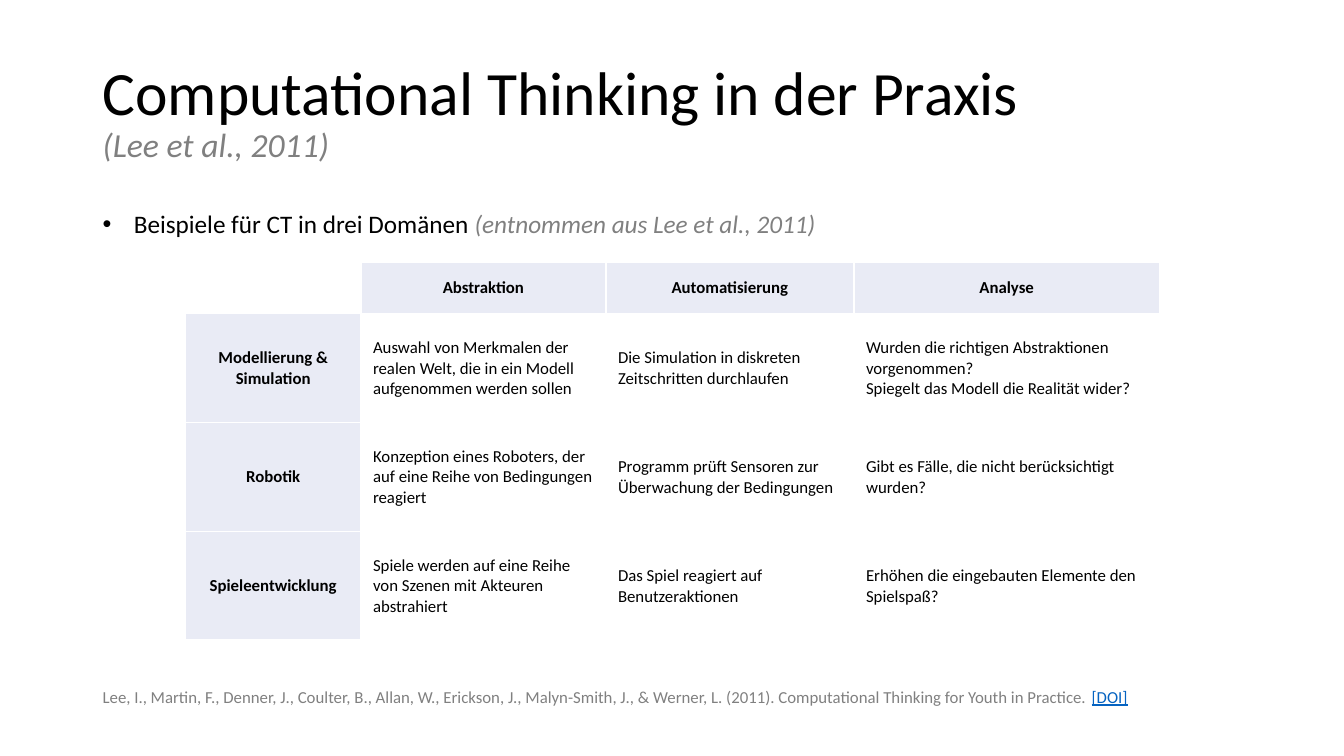
from lxml.etree import SubElement
from pptx import Presentation
from pptx.dml.color import RGBColor
from pptx.enum.text import MSO_ANCHOR, PP_ALIGN
from pptx.oxml.ns import qn
from pptx.util import Inches, Pt

WIDE, HIGH = 13.33, 7.5
LEFT, SPAN = 0.92, 11.5
FONT = "Calibri"
BLACK = RGBColor(0x00, 0x00, 0x00)
GREY = RGBColor(0x80, 0x80, 0x80)
BLUE = RGBColor(0x05, 0x63, 0xC1)
PALE = RGBColor(0xE9, 0xEB, 0xF5)

COLS = [1.74, 2.43, 2.46, 3.03]
ROWS = [0.51] + [1.08] * 3
CELLS = [
    ["", "Abstraktion", "Automatisierung", "Analyse"],
    ["Modellierung & Simulation",
     "Auswahl von Merkmalen der realen Welt, die in ein Modell aufgenommen werden sollen",
     "Die Simulation in diskreten Zeitschritten durchlaufen",
     "Wurden die richtigen Abstraktionen vorgenommen?\v"
     "Spiegelt das Modell die Realität wider?"],
    ["Robotik",
     "Konzeption eines Roboters, der auf eine Reihe von Bedingungen reagiert",
     "Programm prüft Sensoren zur Überwachung der Bedingungen",
     "Gibt es Fälle, die nicht berücksichtigt wurden?"],
    ["Spieleentwicklung",
     "Spiele werden auf eine Reihe von Szenen mit Akteuren abstrahiert",
     "Das Spiel reagiert auf Benutzeraktionen",
     "Erhöhen die eingebauten Elemente den Spielspaß?"],
]


def write(para, text, size=12, color=BLACK, bold=False, italic=False, under=False):
    """Append text to a paragraph; a vertical tab breaks the line."""
    for i, part in enumerate(text.split("\v")):
        if i:
            para.add_line_break()
        if not part:
            continue
        run = para.add_run()
        run.text = part
        font = run.font
        font.name, font.size, font.color.rgb = FONT, Pt(size), color
        font.bold, font.italic, font.underline = bold, italic, under


def add_box(slide, box, anchor=MSO_ANCHOR.TOP):
    """Add a wrapping text box and return its first paragraph."""
    frame = slide.shapes.add_textbox(*map(Inches, box)).text_frame
    frame.word_wrap = True
    frame.vertical_anchor = anchor
    return frame.paragraphs[0]


def add_title(slide, box):
    para = add_box(slide, box, MSO_ANCHOR.MIDDLE)
    para.line_spacing = 0.9
    write(para, "Computational Thinking in der Praxis\v", size=44)
    write(para, "(Lee et al., 2011)", size=24, color=GREY, italic=True)


def add_point(slide, box):
    para = add_box(slide, box)
    props = para._p.get_or_add_pPr()
    props.set("marL", str(Inches(0.31)))
    props.set("indent", str(Inches(-0.31)))
    SubElement(props, qn("a:buFont"), typeface="Arial")
    SubElement(props, qn("a:buChar"), char="•")
    write(para, "Beispiele für CT in drei Domänen ", size=18)
    write(para, "(entnommen aus Lee et al., 2011)", size=18, color=GREY, italic=True)


def add_edges(cell):
    """Draw thin white borders on all four sides."""
    props = cell._tc.get_or_add_tcPr()
    for side in "LRTB":
        line = SubElement(props, qn(f"a:ln{side}"), w=str(Pt(1)))
        SubElement(SubElement(line, qn("a:solidFill")), qn("a:srgbClr"), val="FFFFFF")


def fill_cell(cell, text, head):
    side = Inches(0.01 if head else 0.12)
    cell.margin_left = cell.margin_right = side
    cell.margin_top, cell.margin_bottom = Inches(0.01), 0
    cell.vertical_anchor = MSO_ANCHOR.MIDDLE
    add_edges(cell)
    if head and text:
        cell.fill.solid()
        cell.fill.fore_color.rgb = PALE
    else:
        cell.fill.background()
    para = cell.text_frame.paragraphs[0]
    para.alignment = PP_ALIGN.CENTER if head else PP_ALIGN.LEFT
    write(para, text, bold=head)


def add_grid(slide, left, top):
    box = map(Inches, (left, top, sum(COLS), sum(ROWS)))
    table = slide.shapes.add_table(len(ROWS), len(COLS), *box).table
    table.first_row = table.horz_banding = False
    for col, width in zip(table.columns, COLS):
        col.width = Inches(width)
    for r, texts in enumerate(CELLS):
        table.rows[r].height = Inches(ROWS[r])
        for c, text in enumerate(texts):
            fill_cell(table.cell(r, c), text, head=r == 0 or c == 0)


def add_source(slide, box):
    para = add_box(slide, box)
    write(para, "Lee, I., Martin, F., Denner, J., Coulter, B., Allan, W., Erickson, J., "
          "Malyn-Smith, J., & Werner, L. (2011). "
          "Computational Thinking for Youth in Practice. ", color=GREY)
    write(para, "[DOI]", color=BLUE, under=True)


def main():
    deck = Presentation()
    deck.slide_width, deck.slide_height = Inches(WIDE), Inches(HIGH)
    slide = deck.slides.add_slide(deck.slide_layouts[6])
    add_title(slide, (LEFT, 0.4, SPAN, 1.45))
    add_point(slide, (LEFT, 2.02, SPAN, 0.4))
    add_grid(slide, 2 * LEFT, 2.6)
    add_source(slide, (LEFT, 6.76, SPAN, 0.3))
    deck.save("out.pptx")


if __name__ == "__main__":
    main()
